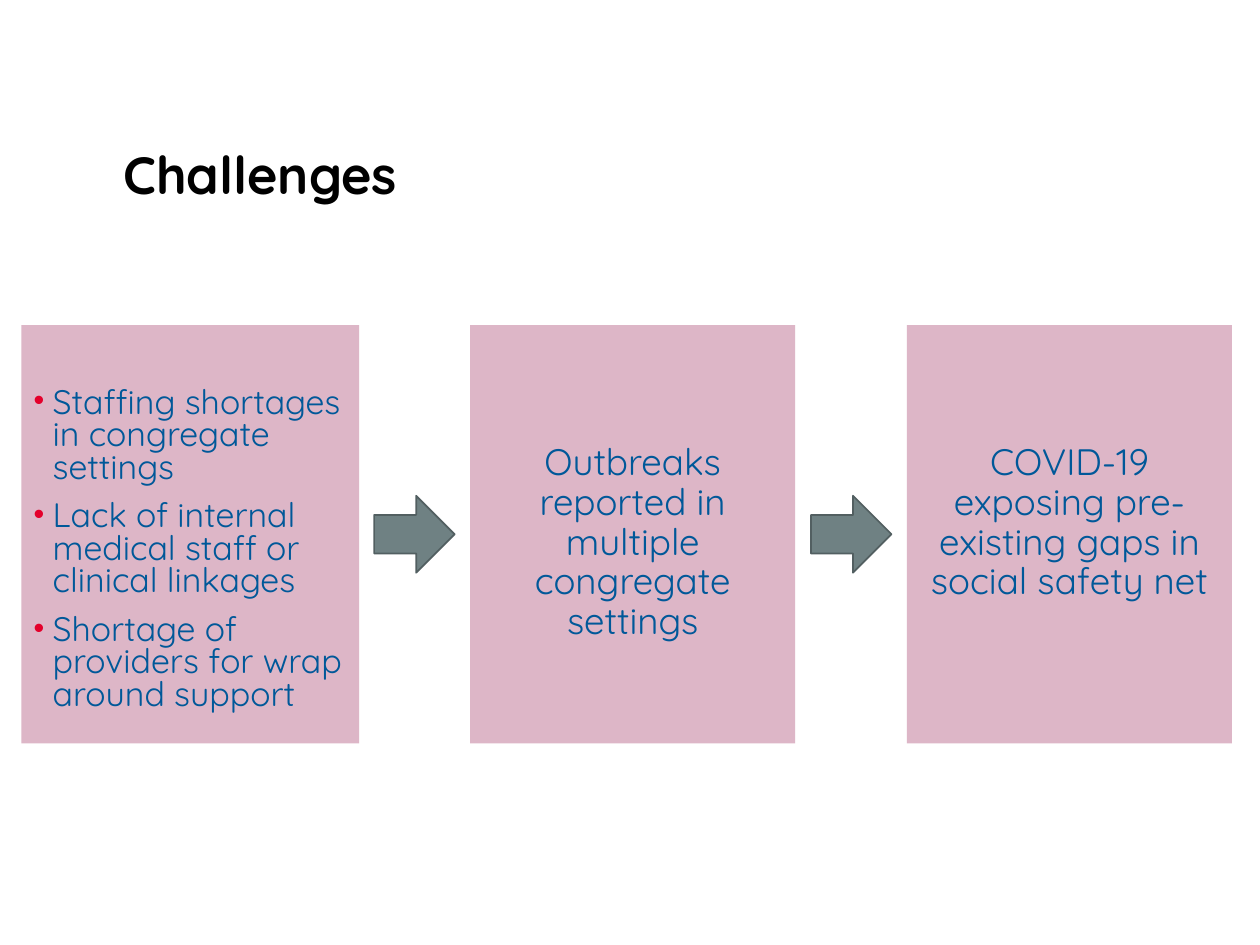
from lxml.etree import SubElement
from pptx import Presentation
from pptx.dml.color import RGBColor
from pptx.enum.shapes import MSO_SHAPE
from pptx.enum.text import MSO_ANCHOR, PP_ALIGN
from pptx.oxml.ns import qn
from pptx.util import Pt

BLACK = RGBColor(0x00, 0x00, 0x00)
BLUE = RGBColor(0x00, 0x58, 0x99)
RED = RGBColor(0xE4, 0x00, 0x2B)
PINK = RGBColor(0xDD, 0xB6, 0xC7)
GREY = RGBColor(0x6F, 0x81, 0x83)
DARK_GREY = RGBColor(0x52, 0x5F, 0x61)
FONT = "Quicksand"
CAUSES = [
    "Staffing shortages in congregate settings",
    "Lack of internal medical staff or clinical linkages",
    "Shortage of providers for wrap around support",
]
EFFECTS = [
    "Outbreaks reported in multiple congregate settings",
    "COVID-19 exposing pre-existing gaps in social safety net",
]
PANEL_TOP, PANEL_HEIGHT = 185.8, 239
EFFECT_LEFT, EFFECT_WIDTH, EFFECT_STEP = 268.6, 185.8, 249.6
ARROW_WIDTH, ARROW_HEIGHT, ARROW_OFFSET = 46, 44, 54.8


def add_bullet(paragraph):
    """Give a paragraph a hanging red bullet."""
    properties = paragraph._p.get_or_add_pPr()
    properties.set("marL", str(Pt(10.8)))
    properties.set("indent", str(-Pt(10.8)))
    colour = SubElement(properties, qn("a:buClr"))
    SubElement(colour, qn("a:srgbClr"), val=str(RED))
    SubElement(properties, qn("a:buSzPct"), val="90000")
    SubElement(properties, qn("a:buFont"), typeface="Arial")
    SubElement(properties, qn("a:buChar"), char="•")


def write_text(frame, lines, *, size, colour=BLUE, bold=False, spacing=0.9,
               align=PP_ALIGN.LEFT, anchor=MSO_ANCHOR.TOP, bullets=False,
               side_inset=7.2, top_inset=3.6):
    """Fill a text frame with formatted paragraphs."""
    frame.word_wrap = True
    frame.vertical_anchor = anchor
    frame.margin_left = frame.margin_right = Pt(side_inset)
    frame.margin_top, frame.margin_bottom = Pt(top_inset), Pt(3.6)
    for index, line in enumerate(lines):
        paragraph = frame.add_paragraph() if index else frame.paragraphs[0]
        if bullets:
            add_bullet(paragraph)
        paragraph.text = line
        paragraph.alignment = align
        paragraph.line_spacing = spacing
        paragraph.space_before = Pt(9 if index else 0)
        font = paragraph.font
        font.name, font.size, font.bold = FONT, Pt(size), bold
        font.color.rgb = colour


def add_title(slide, left, top, width, height):
    """Place the slide heading."""
    heading = slide.shapes.add_textbox(Pt(left), Pt(top), Pt(width), Pt(height))
    write_text(heading.text_frame, ["Challenges"], size=30, colour=BLACK,
               bold=True, anchor=MSO_ANCHOR.MIDDLE)


def add_panel(slide, left, top, width, height, lines, **text_format):
    """Place a pink panel with its text."""
    panel = slide.shapes.add_shape(MSO_SHAPE.RECTANGLE, Pt(left), Pt(top),
                                   Pt(width), Pt(height))
    panel.shadow.inherit = False
    panel.fill.solid()
    panel.fill.fore_color.rgb = PINK
    panel.line.fill.background()
    write_text(panel.text_frame, lines, **text_format)


def add_arrow(slide, left, top, width, height):
    """Place an arrow that leads to the next panel."""
    arrow = slide.shapes.add_shape(MSO_SHAPE.RIGHT_ARROW, Pt(left), Pt(top),
                                   Pt(width), Pt(height))
    arrow.shadow.inherit = False
    arrow.fill.solid()
    arrow.fill.fore_color.rgb = GREY
    arrow.line.color.rgb = DARK_GREY
    arrow.line.width = Pt(1)


def main():
    """Build and save the slide."""
    deck = Presentation()
    deck.slide_width, deck.slide_height = Pt(720), Pt(540)
    slide = deck.slides.add_slide(deck.slide_layouts[6])
    add_title(slide, 63.4, 38.2, 656.6, 126.7)
    add_panel(slide, 12.2, PANEL_TOP, 193, PANEL_HEIGHT, CAUSES,
              size=19.4, spacing=0.8, bullets=True, top_inset=36)
    arrow_top = PANEL_TOP + (PANEL_HEIGHT - ARROW_HEIGHT) / 2
    for index, effect in enumerate(EFFECTS):
        left = EFFECT_LEFT + index * EFFECT_STEP
        add_panel(slide, left, PANEL_TOP, EFFECT_WIDTH, PANEL_HEIGHT, [effect],
                  size=21, align=PP_ALIGN.CENTER, side_inset=5, top_inset=68)
        add_arrow(slide, left - ARROW_OFFSET, arrow_top, ARROW_WIDTH, ARROW_HEIGHT)
    deck.save("out.pptx")


if __name__ == "__main__":
    main()
